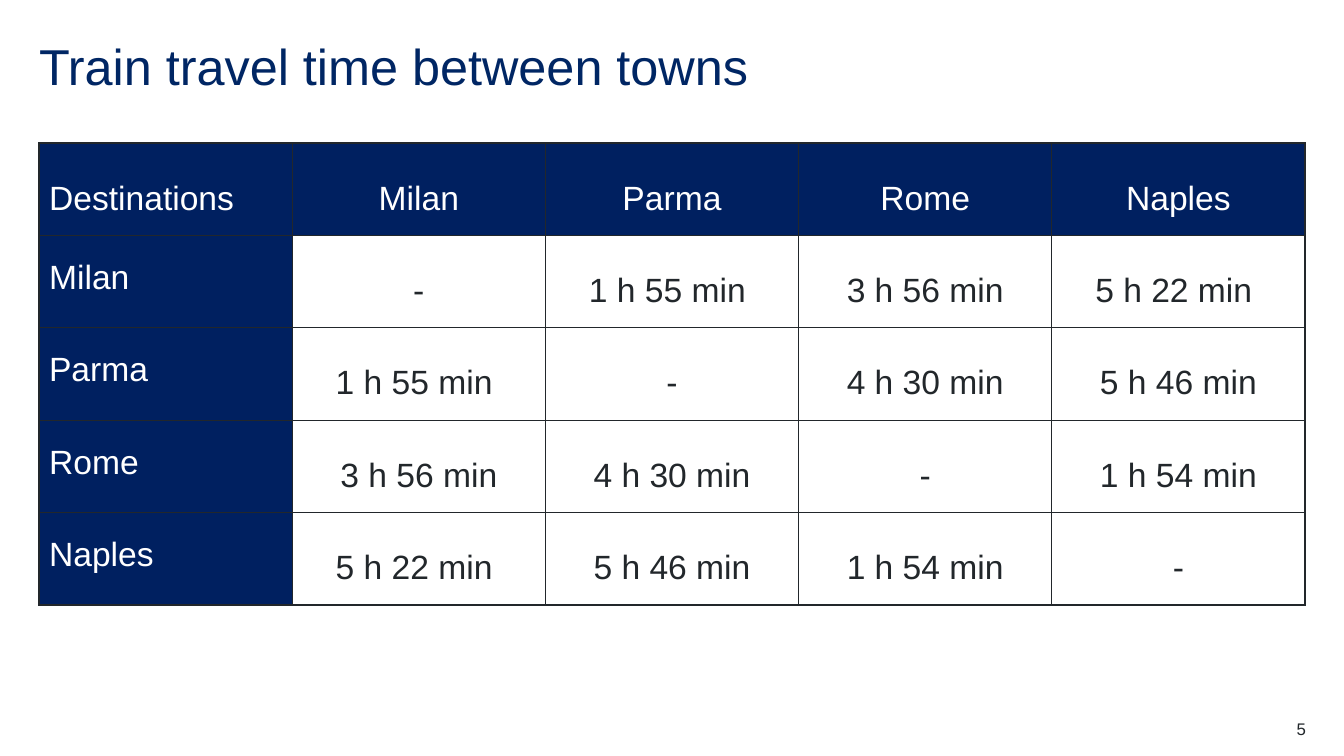
from lxml import etree
from pptx import Presentation
from pptx import util as u
from pptx.dml.color import RGBColor
from pptx.enum import text
from pptx.oxml.ns import qn

TITLE = "Train travel time between towns"
PAGE = "5"
ROWS = [
    ["Destinations", "Milan", "Parma", "Rome", "Naples"],
    ["Milan", "-", "1 h 55 min ", "3 h 56 min", "5 h 22 min "],
    ["Parma", "1 h 55 min ", "-", "4 h 30 min", "5 h 46 min"],
    ["Rome", "3 h 56 min", "4 h 30 min", "-", "1 h 54 min"],
    ["Naples", "5 h 22 min ", "5 h 46 min", "1 h 54 min", "-"],
]

NAVY = RGBColor(0x00, 0x20, 0x60)
TITLE_BLUE = RGBColor(0x00, 0x26, 0x64)
INK = RGBColor(0x22, 0x27, 0x2B)
WHITE = RGBColor(0xFF, 0xFF, 0xFF)

LEFT, TABLE_TOP, WIDTH, TABLE_H = 39, 143, 1266, 462
LEFT_AL, CENTER, RIGHT = text.PP_ALIGN.LEFT, text.PP_ALIGN.CENTER, text.PP_ALIGN.RIGHT
TOP, MIDDLE = text.MSO_ANCHOR.TOP, text.MSO_ANCHOR.MIDDLE


def px(n):
    return u.Emu(round(n * 914400 / 100.8))


def write(tf, words, size=24, color=INK, align=LEFT_AL, spacing=None, after=None):
    p = tf.paragraphs[0]
    p.alignment, p.line_spacing = align, spacing
    if after:
        p.space_after = u.Pt(after)
    r = p.add_run()
    r.text = words
    f = r.font
    f.name, f.size, f.bold = "Arial", u.Pt(size), False
    f.color.rgb = color


def add_text(s, box, words, anchor=TOP, **fmt):
    tf = s.shapes.add_textbox(*map(px, box)).text_frame
    tf.word_wrap, tf.vertical_anchor = True, anchor
    tf.margin_left = tf.margin_top = tf.margin_right = tf.margin_bottom = 0
    write(tf, words, **fmt)


def add_borders(cell):
    tcPr = cell._tc.get_or_add_tcPr()
    for i, side in enumerate(("lnL", "lnR", "lnT", "lnB")):
        ln = etree.Element(qn("a:" + side), w=str(u.Pt(1)))
        fill = etree.SubElement(ln, qn("a:solidFill"))
        etree.SubElement(fill, qn("a:srgbClr"), val=str(INK))
        tcPr.insert(i, ln)


def add_times(s):
    n_rows, n_cols = len(ROWS), len(ROWS[0])
    box = map(px, (LEFT, TABLE_TOP, WIDTH, TABLE_H))
    table = s.shapes.add_table(n_rows, n_cols, *box).table
    table.first_row = table.horz_banding = False
    for col in table.columns:
        col.width = px(WIDTH / n_cols)
    for i, row in enumerate(ROWS):
        table.rows[i].height = px(TABLE_H / n_rows)
        for j, words in enumerate(row):
            cell = table.cell(i, j)
            header = i == 0 or j == 0
            if header:
                cell.fill.solid()
                cell.fill.fore_color.rgb = NAVY
            else:
                cell.fill.background()
            cell.vertical_anchor = TOP if i and j == 0 else MIDDLE
            write(cell.text_frame, words, color=WHITE if header else INK,
                  align=CENTER if j else LEFT_AL, spacing=1.5, after=12)
            add_borders(cell)


def main():
    prs = Presentation()
    prs.slide_width, prs.slide_height = px(1344), px(756)
    s = prs.slides.add_slide(prs.slide_layouts[6])
    add_text(s, (LEFT, 39, WIDTH, 60), TITLE, anchor=MIDDLE,
             size=36, color=TITLE_BLUE, spacing=0.9)
    add_times(s)
    add_text(s, (1226, 719, 80, 20), PAGE, size=12, align=RIGHT)
    prs.save("out.pptx")


if __name__ == "__main__":
    main()
